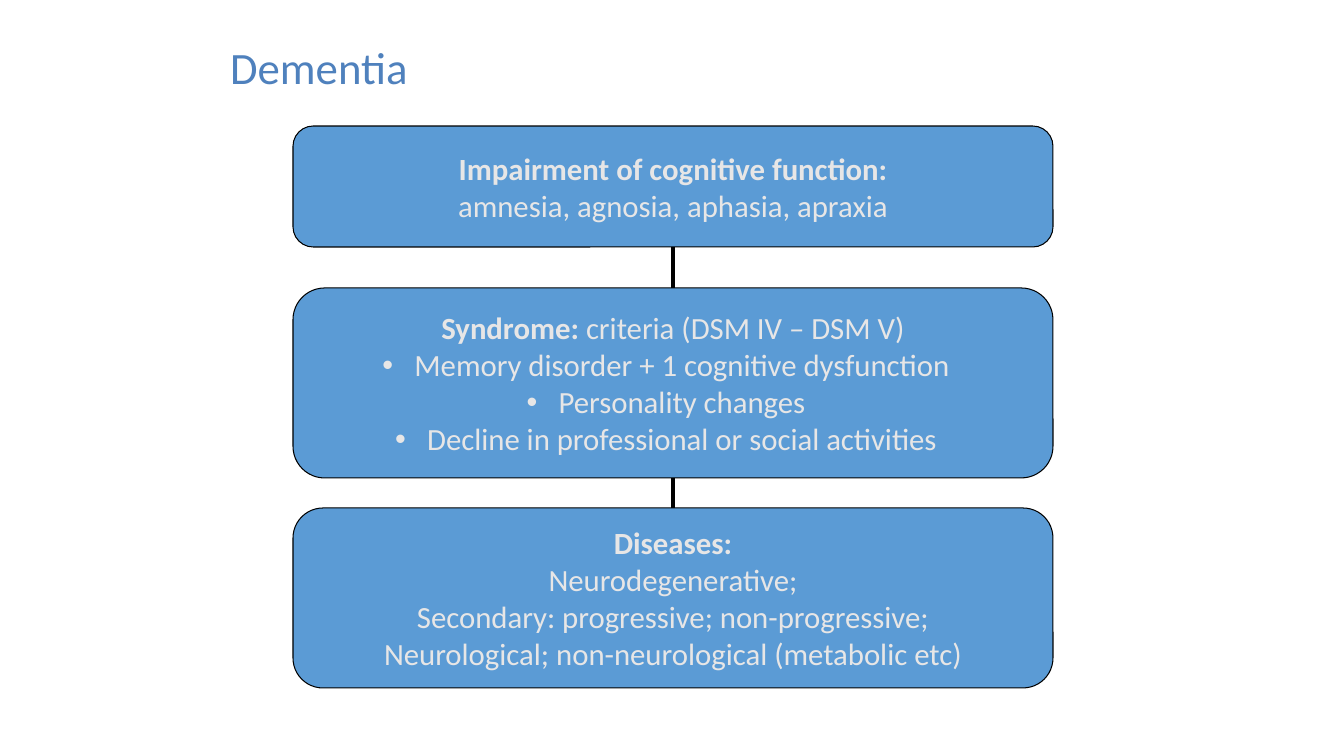
from dataclasses import dataclass
from itertools import pairwise

from lxml import etree
from pptx import Presentation
from pptx.dml.color import RGBColor
from pptx.enum.shapes import MSO_CONNECTOR, MSO_SHAPE
from pptx.enum.text import MSO_ANCHOR, PP_ALIGN
from pptx.oxml.ns import qn
from pptx.util import Pt

ROUNDED = MSO_SHAPE.ROUNDED_RECTANGLE
STRAIGHT = MSO_CONNECTOR.STRAIGHT
MIDDLE = MSO_ANCHOR.MIDDLE
LEFT, CENTER = PP_ALIGN.LEFT, PP_ALIGN.CENTER
TOP_SIDE, BOTTOM_SIDE = 0, 2

TITLE = "Dementia"
# Each box: top, height, then lines of (bold part, plain part, bulleted)
BOXES = [
    (126, 121, [
        ("Impairment of cognitive function:", "", False),
        ("", "amnesia, agnosia, aphasia, apraxia", False),
    ]),
    (288, 190, [
        ("Syndrome: ", "criteria (DSM IV – DSM V)", False),
        ("", "Memory disorder + 1 cognitive dysfunction", True),
        ("", "Personality changes", True),
        ("", "Decline in professional or social activities", True),
    ]),
    (508, 180, [
        ("Diseases:", "", False),
        ("", "Neurodegenerative;", False),
        ("", "Secondary: progressive; non-progressive;", False),
        ("", "Neurological; non-neurological (metabolic etc)", False),
    ]),
]

SLIDE_SIZE = (1344, 756)
TITLE_BOX = (220, 22, 907, 95)
BOX_LEFT, BOX_WIDTH = 293, 760
BULLET_MARGIN, BULLET_HANG = 18, 32


@dataclass(frozen=True)
class Theme:
    font: str = "Calibri"
    title: RGBColor = RGBColor(0x4F, 0x81, 0xBD)
    box: RGBColor = RGBColor(0x5B, 0x9B, 0xD5)
    text: RGBColor = RGBColor(0xE7, 0xE6, 0xE6)
    line: RGBColor = RGBColor(0, 0, 0)
    title_size: Pt = Pt(32)
    text_size: Pt = Pt(22)
    outline: Pt = Pt(0.75)
    link: Pt = Pt(2.25)


THEME = Theme()


def px(n):
    return round(n * 914400 / 100.8)


def style_run(r, size, color, bold=False):
    r.font.name = THEME.font
    r.font.size = size
    r.font.color.rgb = color
    r.font.bold = bold


def add_bullet(p):
    pPr = p._p.get_or_add_pPr()
    pPr.set("marL", str(px(BULLET_MARGIN)))
    pPr.set("indent", str(-px(BULLET_HANG)))
    etree.SubElement(pPr, qn("a:buFont")).set("typeface", "Arial")
    etree.SubElement(pPr, qn("a:buChar")).set("char", "•")


def add_title(slide):
    sp = slide.shapes.title
    sp.left, sp.top, sp.width, sp.height = map(px, TITLE_BOX)
    tf = sp.text_frame
    tf.text = TITLE
    tf.vertical_anchor = MIDDLE
    p = tf.paragraphs[0]
    p.alignment = LEFT
    p.line_spacing = 0.9
    style_run(p.runs[0], THEME.title_size, THEME.title)


def add_box(slide, top, height, lines):
    sp = slide.shapes.add_shape(
        ROUNDED, px(BOX_LEFT), px(top), px(BOX_WIDTH), px(height))
    sp.shadow.inherit = False
    sp.fill.solid()
    sp.fill.fore_color.rgb = THEME.box
    sp.line.color.rgb = THEME.line
    sp.line.width = THEME.outline

    tf = sp.text_frame
    tf.word_wrap = False
    tf.vertical_anchor = MIDDLE
    tf.margin_left = tf.margin_top = tf.margin_right = tf.margin_bottom = 0
    for i, (strong, plain, bulleted) in enumerate(lines):
        p = tf.add_paragraph() if i else tf.paragraphs[0]
        p.alignment = CENTER
        if bulleted:
            add_bullet(p)
        for text, bold in ((strong, True), (plain, False)):
            if text:
                r = p.add_run()
                r.text = text
                style_run(r, THEME.text_size, THEME.text, bold)
    return sp


def link_boxes(slide, upper, lower):
    line = slide.shapes.add_connector(STRAIGHT, 0, 0, 0, 0)
    line.begin_connect(upper, BOTTOM_SIDE)
    line.end_connect(lower, TOP_SIDE)
    line.line.color.rgb = THEME.line
    line.line.width = THEME.link
    etree.SubElement(line._element.spPr, qn("a:effectLst"))


def main():
    prs = Presentation()
    prs.slide_width, prs.slide_height = map(px, SLIDE_SIZE)
    slide = prs.slides.add_slide(prs.slide_layouts[5])
    add_title(slide)
    boxes = [add_box(slide, *box) for box in BOXES]
    for upper, lower in pairwise(boxes):
        link_boxes(slide, upper, lower)
    prs.save("out.pptx")


if __name__ == "__main__":
    main()
